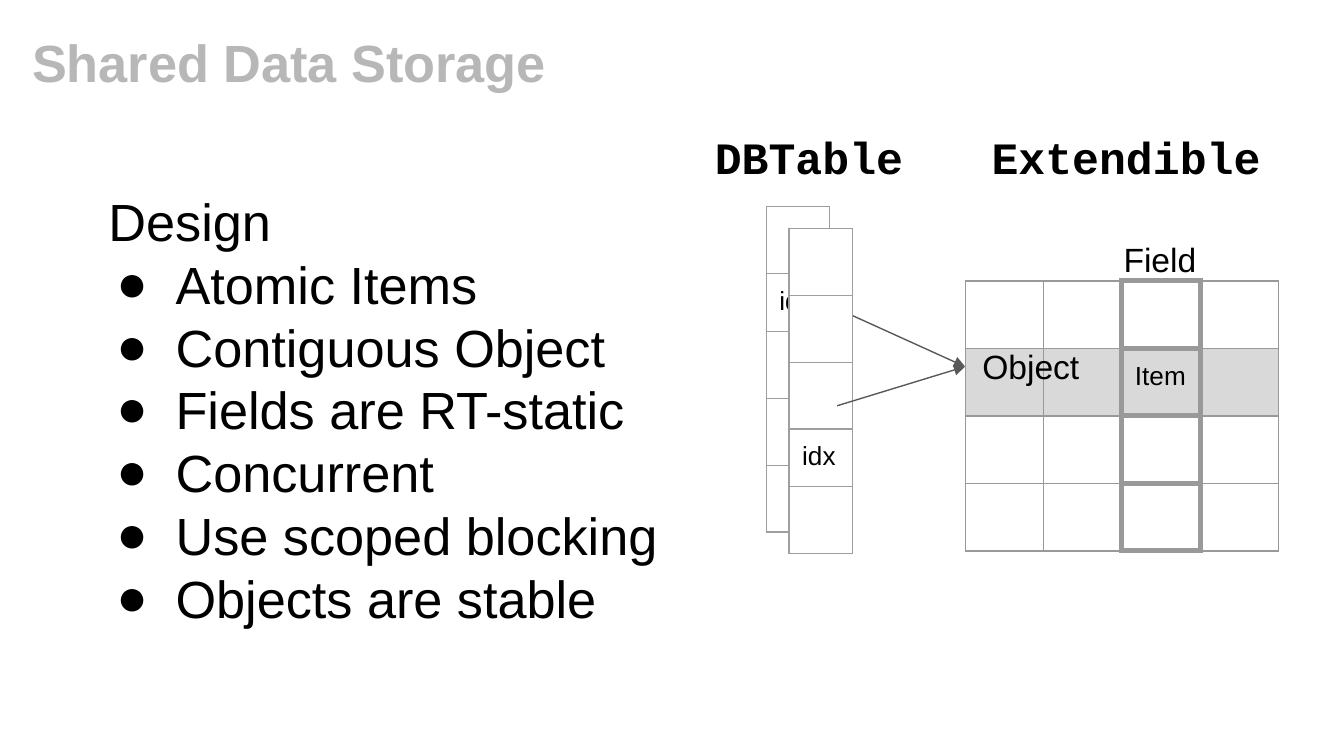
from lxml import etree
from pptx import Presentation
from pptx import util as u
from pptx.dml.color import RGBColor
from pptx.enum import shapes, text
from pptx.oxml import ns

BLACK = RGBColor(0x00, 0x00, 0x00)
WHITE = RGBColor(0xFF, 0xFF, 0xFF)
TITLE_GRAY = RGBColor(0xB7, 0xB7, 0xB7)
ROW_GRAY = RGBColor(0xD9, 0xD9, 0xD9)
GRID_LINE = RGBColor(0x99, 0x99, 0x99)
STRIP_LINE = RGBColor(0x9E, 0x9E, 0x9E)
ARROW_LINE = RGBColor(0x59, 0x59, 0x59)

THIN, THICK = 0.75, 3
INSET = u.Cm(0.25)
FIELD_COLUMN, OBJECT_ROW = 2, 1


def add_child(parent, tag, **attributes):
    return etree.SubElement(parent, ns.qn(tag), attributes)


def write(para, words, size=18, font="Arial", color=BLACK, bold=False,
          align=text.PP_ALIGN.LEFT, bullet=None):
    """Put one formatted span in a paragraph."""
    para.alignment = align
    span = para.add_run()
    span.text = words
    span.font.size = u.Pt(size)
    span.font.name = font
    span.font.bold = bold
    span.font.color.rgb = color
    if bullet:
        properties = para._p.get_or_add_pPr()
        properties.set("marL", str(u.Cm(1.27)))
        properties.set("indent", str(-u.Cm(1.12)))
        bullet_color = add_child(properties, "a:buClr")
        add_child(bullet_color, "a:srgbClr", val=str(color))
        add_child(properties, "a:buSzPct", val="100000")
        add_child(properties, "a:buFont", typeface=font)
        add_child(properties, "a:buChar", char=bullet)


def set_borders(cell, color, widths):
    """Draw the four cell edges; widths are in points by side."""
    properties = cell._tc.get_or_add_tcPr()
    for side in "LRTB":
        edge = add_child(properties, f"a:ln{side}", w=str(u.Pt(widths[side])))
        add_child(add_child(edge, "a:solidFill"), "a:srgbClr", val=str(color))
        add_child(edge, "a:prstDash", val="solid")


def even_edges(column):
    return dict.fromkeys("LRTB", THIN)


def field_edges(column):
    """Thick lines all round the field column, shared with its neighbours."""
    widths = dict.fromkeys("LRTB", THICK if column == FIELD_COLUMN else THIN)
    if column == FIELD_COLUMN - 1:
        widths["R"] = THICK
    if column == FIELD_COLUMN + 1:
        widths["L"] = THICK
    return widths


class Sketch:
    def __init__(self, page):
        self.page = page

    def text_box(self, left, top, width, height, lines,
                 anchor=text.MSO_ANCHOR.TOP, **style):
        """Each line is a pair of words and its bullet, if any."""
        box = self.page.shapes.add_textbox(
            u.Cm(left), u.Cm(top), u.Cm(width), u.Cm(height))
        frame = box.text_frame
        frame.word_wrap = True
        frame.vertical_anchor = anchor
        frame.margin_left = frame.margin_right = INSET
        frame.margin_top = frame.margin_bottom = INSET
        for number, (words, bullet) in enumerate(lines):
            para = frame.add_paragraph() if number else frame.paragraphs[0]
            write(para, words, bullet=bullet, **style)

    def label(self, left, top, width, height, words, **style):
        self.text_box(left, top, width, height, [(words, None)], **style)

    def table(self, left, top, column_width, columns, heights, line,
              words, fills, edges=even_edges):
        """words is keyed by (row, column); fills holds one colour a row."""
        frame = self.page.shapes.add_table(
            len(heights), columns, u.Cm(left), u.Cm(top),
            u.Cm(column_width * columns), u.Cm(sum(heights)))
        table = frame.table
        table.first_row = table.horz_banding = False
        for column in table.columns:
            column.width = u.Cm(column_width)
        for row, height in enumerate(heights):
            table.rows[row].height = u.Cm(height)
            for column in range(columns):
                cell = table.cell(row, column)
                cell.margin_left = cell.margin_right = INSET
                cell.margin_top = cell.margin_bottom = INSET
                set_borders(cell, line, edges(column))
                if fills[row] is None:
                    cell.fill.background()
                else:
                    cell.fill.solid()
                    cell.fill.fore_color.rgb = fills[row]
                if (row, column) in words:
                    write(cell.text_frame.paragraphs[0],
                          words[row, column], size=14)

    def index_strip(self, left, top, index_row, fill=None):
        heights = [1.07 if row == index_row else 1.22 for row in range(5)]
        self.table(left, top, 1.2, 1, heights, STRIP_LINE,
                   {(index_row, 0): "idx"}, [fill] * 5)

    def arrow(self, start, end):
        arrow = self.page.shapes.add_connector(
            shapes.MSO_CONNECTOR.STRAIGHT,
            *(u.Cm(value) for value in (*start, *end)))
        arrow.line.color.rgb = ARROW_LINE
        arrow.line.width = u.Pt(THIN)
        add_child(arrow.line._get_or_add_ln(), "a:tailEnd", type="triangle")
        add_child(arrow._element.spPr, "a:effectLst")


def main():
    deck = Presentation()
    deck.slide_width, deck.slide_height = u.Cm(25.4), u.Cm(14.29)
    sketch = Sketch(deck.slides.add_slide(deck.slide_layouts[6]))

    # Object and field grid
    fills = [ROW_GRAY if row == OBJECT_ROW else None for row in range(4)]
    sketch.table(18.24, 5.31, 1.48, 4, [1.22] * 4, GRID_LINE,
                 {(OBJECT_ROW, FIELD_COLUMN): "Item"}, fills, field_edges)

    # Design points
    points = ["Atomic Items", "Contiguous Object", "Fields are RT-static",
              "Concurrent", "Use scoped blocking", "Objects are stable"]
    sketch.text_box(1.8, 3.33, 14.02, 8.69,
                    [("Design", None)] + [(point, "●") for point in points],
                    size=28)

    # Title and grid labels
    sketch.label(0.36, 0.33, 23.67, 1.6, "Shared Data Storage",
                 size=28, color=TITLE_GRAY, bold=True)
    sketch.label(18.24, 6.4, 2.41, 1.04, "Object",
                 anchor=text.MSO_ANCHOR.MIDDLE, align=text.PP_ALIGN.RIGHT)
    sketch.label(20.73, 4.27, 2.13, 1.04, "Field", align=text.PP_ALIGN.RIGHT)

    # Index strips, each with an arrow to the object row
    target = (18.24, 6.93)
    sketch.index_strip(14.48, 3.91, index_row=1)
    sketch.arrow((15.57, 5.72), target)
    sketch.index_strip(14.91, 4.32, index_row=3, fill=WHITE)
    sketch.arrow((15.82, 7.67), target)

    # Headings
    for left, width, words in [(13.26, 4.7, "DBTable"),
                               (18.49, 5.64, "Extendible")]:
        sketch.label(left, 2.21, width, 1.83, words,
                     size=24, font="Courier New", bold=True)

    deck.save("out.pptx")


if __name__ == "__main__":
    main()
